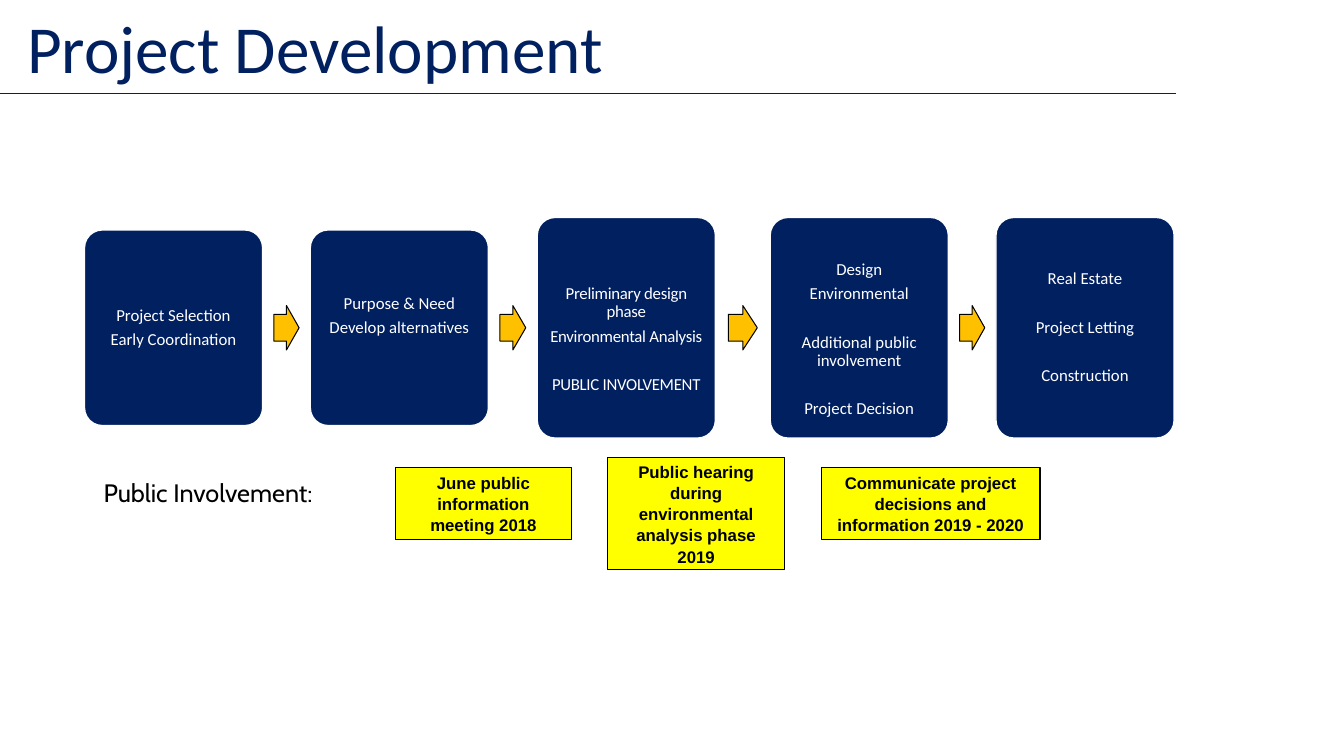
from lxml import etree
from pptx import Presentation
from pptx.dml.color import RGBColor
from pptx.enum import shapes, text
from pptx.oxml.ns import qn
from pptx.util import Cm, Pt

NAVY, GOLD, YELLOW, BLACK, WHITE = "002060", "FFC000", "FFFF00", "000000", "FFFFFF"
TITLE = "Project Development"
LABEL = "Public Involvement:"

# Each phase: left, height, extra top margin, extra bottom margin, letter spacing,
# groups of lines (a wider gap separates groups)
PHASES = [
    (2.13, 4.93, 0, 0, 0, [["Project Selection", "Early Coordination"]]),
    (7.82, 4.93, 0, 0.6, 0, [["Purpose & Need", "Develop alternatives"]]),
    (13.54, 5.56, 0.6, 0, -20, [["Preliminary design phase", "Environmental Analysis"],
                                ["PUBLIC INVOLVEMENT"]]),
    (19.41, 5.56, 0.6, 0, 0, [["Design", "Environmental"],
                              ["Additional public involvement"], ["Project Decision"]]),
    (25.1, 5.56, 0, 0, 0, [["Real Estate"], ["Project Letting"], ["Construction"]]),
]
# Each notice: left, top, width, height, wording
NOTICES = [
    (9.96, 11.79, 4.45, 1.8, "June public information meeting 2018"),
    (20.7, 11.79, 5.51, 1.8, "Communicate project decisions and information 2019 - 2020"),
    (15.32, 11.53, 4.45, 2.82, "Public hearing during environmental analysis phase 2019"),
]
CARD_WIDTH, ROW_MIDDLE = 4.49, 8.26
ARROW_SHARE, ARROW_HEIGHT = 0.53, 1.12
LINE_GAP, GROUP_GAP = 4.2, 17.4


def color(value):
    return RGBColor.from_string(value)


def add_span(para, wording, size, font, value, bold=False):
    span = para.add_run()
    span.text = wording
    span.font.size, span.font.name, span.font.bold = Pt(size), font, bold
    span.font.color.rgb = color(value)
    return span


def add_block(slide, kind, place, adjustments, fill, line, line_width):
    block = slide.shapes.add_shape(kind, *map(Cm, place))
    block.shadow.inherit = False
    for index, value in enumerate(adjustments):
        block.adjustments[index] = value
    block.fill.solid()
    block.fill.fore_color.rgb = color(fill)
    block.line.color.rgb = color(line)
    block.line.width = Pt(line_width)
    block.text_frame.word_wrap = True
    block.text_frame.vertical_anchor = text.MSO_ANCHOR.MIDDLE
    return block


def add_phase(slide, left, height, top_extra, bottom_extra, spacing, groups):
    card = add_block(slide, shapes.MSO_SHAPE.ROUNDED_RECTANGLE,
                     (left, ROW_MIDDLE - height / 2, CARD_WIDTH, height),
                     [0.1], NAVY, WHITE, 1)
    frame = card.text_frame
    frame.margin_left = frame.margin_right = Cm(0.13)
    frame.margin_top, frame.margin_bottom = Cm(0.13 + top_extra), Cm(0.13 + bottom_extra)
    lines = [(wording, group > 0 and index == 0)
             for group, members in enumerate(groups)
             for index, wording in enumerate(members)]
    for number, (wording, opens_group) in enumerate(lines):
        para = frame.add_paragraph() if number else frame.paragraphs[0]
        para.alignment = text.PP_ALIGN.CENTER
        para.line_spacing = 0.9
        para.space_after = Pt(LINE_GAP)
        if opens_group:
            para.space_before = Pt(GROUP_GAP)
        span = add_span(para, wording, 12, "Calibri", WHITE)
        if spacing:
            span.font._element.set("spc", str(spacing))


def add_arrow(slide, start, end):
    """Centre an arrow in the gap between two cards."""
    width = ARROW_SHARE * (end - start)
    add_block(slide, shapes.MSO_SHAPE.RIGHT_ARROW,
              ((start + end - width) / 2, ROW_MIDDLE - ARROW_HEIGHT / 2, width, ARROW_HEIGHT),
              [0.6, 0.5], GOLD, BLACK, 0.75)


def add_notice(slide, left, top, width, height, wording):
    notice = add_block(slide, shapes.MSO_SHAPE.UP_ARROW_CALLOUT, (left, top, width, height),
                       [0.232, 0, 0, 1], YELLOW, BLACK, 0.75)
    para = notice.text_frame.paragraphs[0]
    para.alignment = text.PP_ALIGN.CENTER
    para.line_spacing = 1.05
    add_span(para, wording, 12, "Arial", BLACK, bold=True)


def add_title(slide):
    rule = slide.shapes.add_connector(shapes.MSO_CONNECTOR.STRAIGHT,
                                      Cm(0), Cm(2.34), Cm(29.64), Cm(2.34))
    rule.line.color.rgb = color(NAVY)
    rule.line.width = Pt(0.5)
    etree.SubElement(rule._element.spPr, qn("a:effectLst"))
    title = slide.shapes.title
    title.left, title.top, title.width, title.height = map(Cm, (0.43, 0, 33.02, 2.34))
    frame = title.text_frame
    frame.vertical_anchor = text.MSO_ANCHOR.BOTTOM
    frame.auto_size = text.MSO_AUTO_SIZE.NONE
    para = frame.paragraphs[0]
    para.alignment = text.PP_ALIGN.LEFT
    para.line_spacing = 0.9
    add_span(para, TITLE, 48, "Calibri", NAVY)


def main():
    deck = Presentation()
    deck.slide_width, deck.slide_height = Cm(33.87), Cm(19.05)
    slide = deck.slides.add_slide(deck.slide_layouts[5])
    add_title(slide)
    for phase in PHASES:
        add_phase(slide, *phase)
    for before, after in zip(PHASES, PHASES[1:]):
        add_arrow(slide, before[0] + CARD_WIDTH, after[0])
    for notice in NOTICES:
        add_notice(slide, *notice)
    label = slide.shapes.add_textbox(*map(Cm, (2.36, 11.91, 6.35, 1.03)))
    label.text_frame.word_wrap = True
    add_span(label.text_frame.paragraphs[0], LABEL, 18, "Cabin", BLACK)
    deck.save("out.pptx")


if __name__ == "__main__":
    main()
